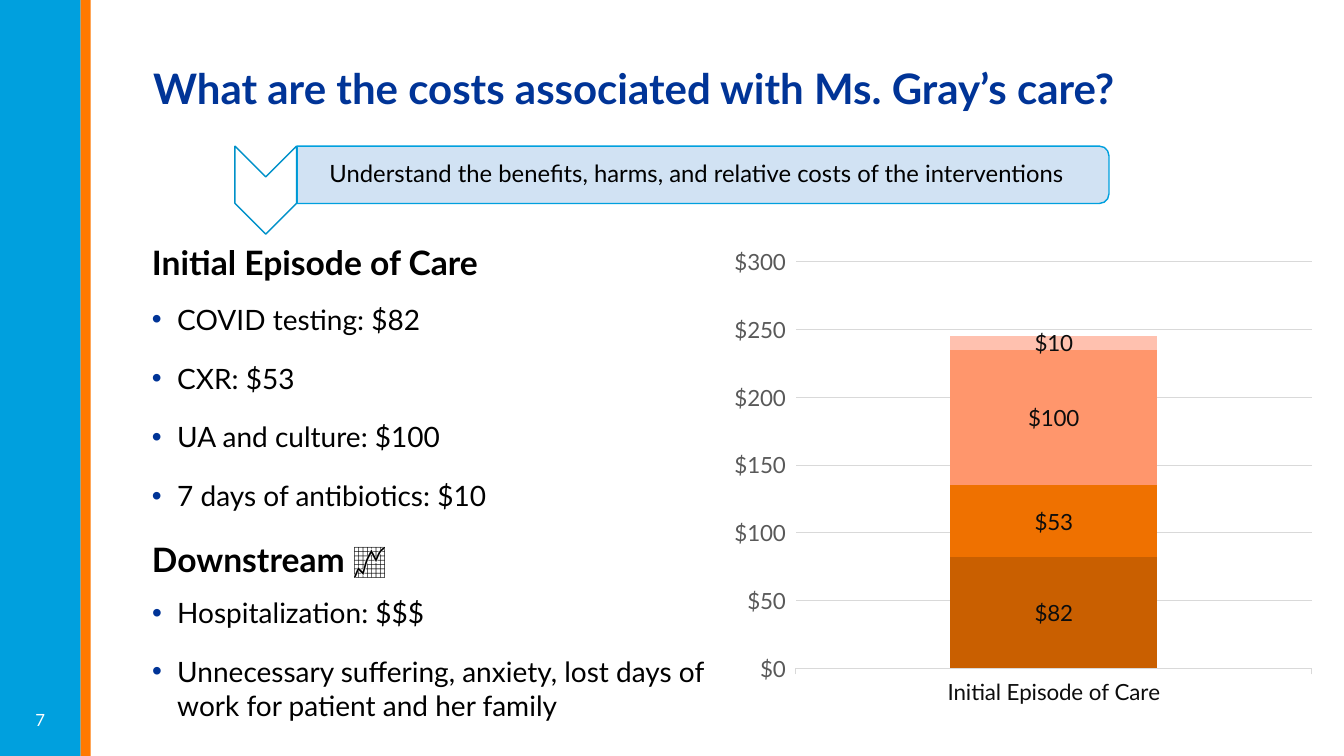
"""Build the slide on the costs of Ms. Gray's care."""
from lxml import etree
from pptx import Presentation
from pptx.chart.data import CategoryChartData
from pptx.dml.color import RGBColor
from pptx.enum.chart import XL_CHART_TYPE, XL_LABEL_POSITION, XL_TICK_MARK
from pptx.enum.shapes import MSO_SHAPE
from pptx.enum.text import MSO_ANCHOR, MSO_AUTO_SIZE, PP_ALIGN
from pptx.oxml import parse_xml
from pptx.oxml.ns import nsdecls, qn
from pptx.util import Pt

RECT, CHEVRON, ROUNDED = MSO_SHAPE.RECTANGLE, MSO_SHAPE.CHEVRON, MSO_SHAPE.ROUND_2_SAME_RECTANGLE
TOP, MIDDLE, BOTTOM = MSO_ANCHOR.TOP, MSO_ANCHOR.MIDDLE, MSO_ANCHOR.BOTTOM
CENTER, LEFT = PP_ALIGN.CENTER, PP_ALIGN.LEFT
STACKED, LABEL_CENTER = XL_CHART_TYPE.COLUMN_STACKED, XL_LABEL_POSITION.CENTER
TICK_OUT, NO_AUTOSIZE = XL_TICK_MARK.OUTSIDE, MSO_AUTO_SIZE.NONE
DOLLARS = '"$"#,##0'


def rgb(color):
    return RGBColor.from_string(color)


def style(font, size, color, bold=False):
    font.name, font.size, font.bold = "Lato", Pt(size), bold
    font.color.rgb = rgb(color)


prs = Presentation()
prs.slide_width, prs.slide_height = Pt(960), Pt(540)
slide = prs.slides.add_slide(prs.slide_layouts[5])
shapes = slide.shapes

panels = [
    (RECT, 0, 0, 57.6, 540, 0, "00A0DE", None),
    (RECT, 57.6, 0, 7.2, 540, 0, "FF7900", None),
    (CHEVRON, 158.4, 113.8, 62.8, 44, 90, "FFFFFF", "0091C9"),
    (ROUNDED, 481.7, -165, 41, 579.8, 90, "CCDFF2", "00A0DE"),
]
for kind, left, top, width, height, turn, fill, outline in panels:
    panel = shapes.add_shape(kind, Pt(left), Pt(top), Pt(width), Pt(height))
    panel.shadow.inherit = False
    panel.rotation = turn
    panel.fill.solid()
    panel.fill.fore_color.rgb = rgb(fill)
    if outline:
        panel.line.color.rgb = rgb(outline)
        panel.line.width = Pt(1)
    else:
        panel.line.fill.background()
banner_color = panel.fill._xPr.find(qn("a:solidFill"))[0]
etree.SubElement(banner_color, qn("a:alpha"), val="90000")

title = shapes.title
title.left, title.top, title.width, title.height = Pt(102.2), Pt(28.8), Pt(792), Pt(72)
title.text_frame.text = "What are the costs associated with Ms. Gray’s care?"
title.text_frame.auto_size = NO_AUTOSIZE
title.text_frame.vertical_anchor = MIDDLE
heading = title.text_frame.paragraphs[0]
heading.alignment, heading.line_spacing = LEFT, 0.9
style(heading.font, 30, "003497", True)

lines = [
    ("Initial Episode of Care", 101.5, 171.4, 396, 33.8, BOTTOM, LEFT, 24, "000000", True),
    ("Downstream 📈", 101.5, 383.8, 396, 33.8, BOTTOM, LEFT, 24, "000000", True),
    ("Understand the benefits, harms, and relative costs of the interventions",
     228.2, 106.6, 561.6, 36.7, MIDDLE, LEFT, 17, "000000", False),
    ("7", 0, 503.3, 57.6, 21.6, BOTTOM, CENTER, 12, "FFFFFF", False),
]
for words, left, top, width, height, anchor, align, size, color, bold in lines:
    frame = shapes.add_textbox(Pt(left), Pt(top), Pt(width), Pt(height)).text_frame
    frame.word_wrap, frame.vertical_anchor = True, anchor
    line = frame.paragraphs[0]
    line.text, line.alignment, line.line_spacing = words, align, 0.9
    style(line.font, size, color, bold)

cost_lists = [
    (212.4, 396, 98, ["COVID testing: $82", "CXR: $53", "UA and culture: $100",
                      "7 days of antibiotics: $10"]),
    (421.9, 418.3, 74.2, ["Hospitalization: $$$",
                          "Unnecessary suffering, anxiety, lost days of work for patient and her family"]),
]
for top, width, height, costs in cost_lists:
    frame = shapes.add_textbox(Pt(101.5), Pt(top), Pt(width), Pt(height)).text_frame
    frame.word_wrap, frame.vertical_anchor = True, TOP
    for index, cost in enumerate(costs):
        item = frame.add_paragraph() if index else frame.paragraphs[0]
        item.text = cost
        item.space_before = Pt(18 if index else 0)
        props = item._p.get_or_add_pPr()
        props.set("marL", str(Pt(18)))
        props.set("indent", str(-Pt(18)))
        bullet_color = etree.SubElement(props, qn("a:buClr"))
        etree.SubElement(bullet_color, qn("a:srgbClr"), val="003497")
        etree.SubElement(props, qn("a:buFont"), typeface="Arial")
        etree.SubElement(props, qn("a:buChar"), char="•")
        style(item.font, 20, "000000")

episode_costs = [(82, "C95F00"), (53, "EF7100"), (100, "FF966C"), (10, "FFC1AF")]
data = CategoryChartData(number_format=DOLLARS)
data.categories = ["Initial Episode of Care"]
for number, (dollars, color) in enumerate(episode_costs, 1):
    data.add_series(f"Series {number}", [dollars])
chart = shapes.add_chart(STACKED, Pt(520.6), Pt(171.4), Pt(425.5), Pt(331.9), data).chart
chart.has_legend = chart.has_title = False
style(chart.font, 10, "000000")
plot = chart.plots[0]
plot.gap_width, plot.overlap, plot.vary_by_categories = 150, 100, False
for series, (dollars, color) in zip(plot.series, episode_costs):
    series.format.fill.solid()
    series.format.fill.fore_color.rgb = rgb(color)
    labels = series.data_labels
    labels.show_value, labels.position = True, LABEL_CENTER
    labels.number_format, labels.number_format_is_linked = DOLLARS, False
    style(labels.font, 16, "0D0D0D")

episodes, amounts = chart.category_axis, chart.value_axis
for axis, color in ((episodes, "0D0D0D"), (amounts, "595959")):
    axis.major_tick_mark = TICK_OUT
    style(axis.tick_labels.font, 16, color)
amounts.minimum_scale, amounts.maximum_scale, amounts.major_unit = 0, 300, 50
amounts.tick_labels.number_format = DOLLARS
amounts.tick_labels.number_format_is_linked = False
amounts.format.line.fill.background()
for rule in (episodes.format.line, amounts.major_gridlines.format.line):
    rule.color.rgb = rgb("D9D9D9")
    rule.width = Pt(0.75)

plot_area = chart._chartSpace.chart.plotArea
for old_layout in plot_area.findall(qn("c:layout")):
    plot_area.remove(old_layout)
extents = "".join(f'<c:{name} val="{value}"/>' for name, value in (
    ("layoutTarget", "inner"), ("xMode", "edge"), ("yMode", "edge"),
    ("x", 0.112), ("y", 0.047), ("w", 0.867), ("h", 0.878)))
plot_area.insert(0, parse_xml(
    f'<c:layout {nsdecls("c")}><c:manualLayout>{extents}</c:manualLayout></c:layout>'))

prs.save("out.pptx")
